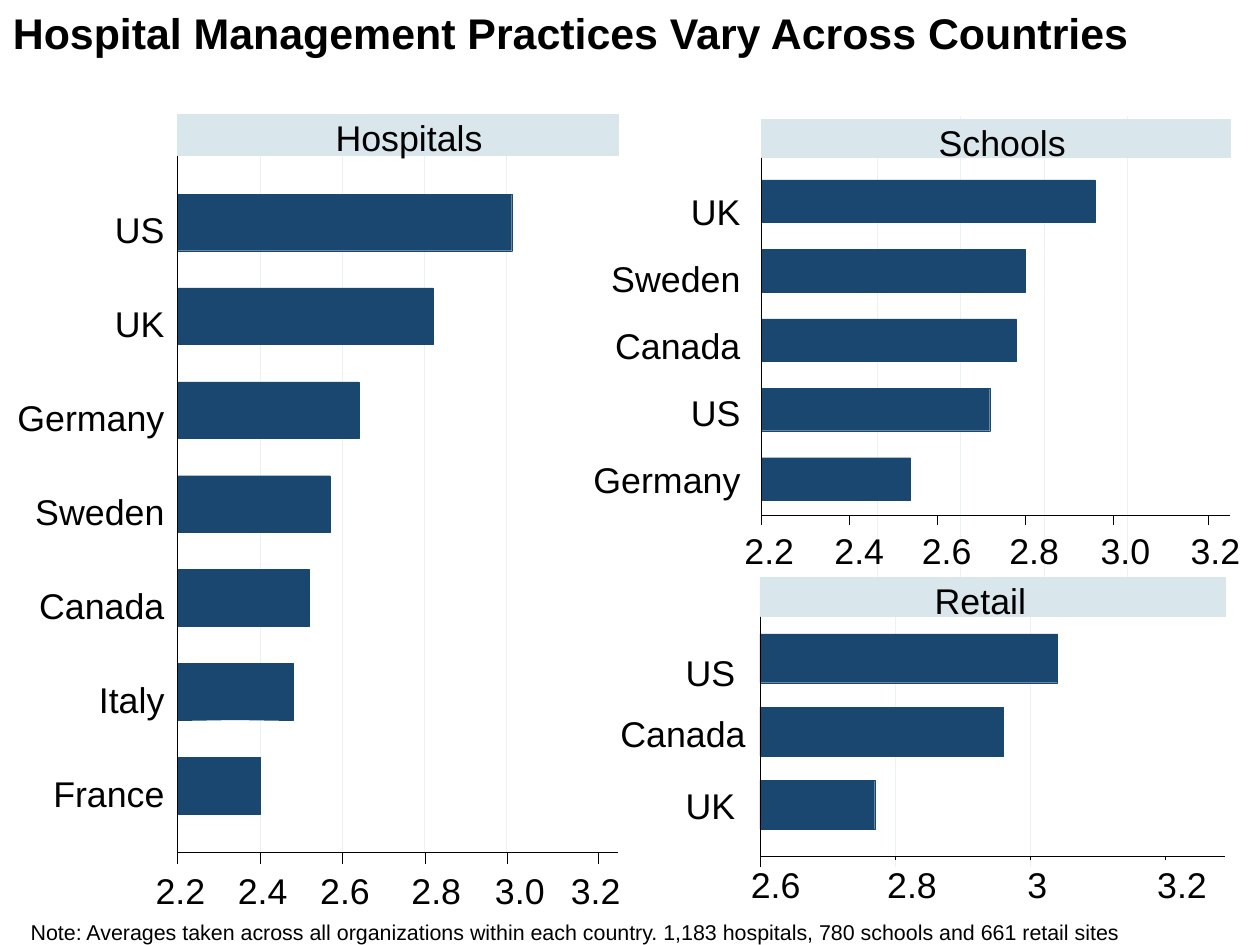
import dataclasses
import typing

import pptx
import pptx.dml.color
import pptx.enum.shapes
import pptx.enum.text
import pptx.oxml.ns
import pptx.shapes.group
import pptx.util
from lxml import etree

Inches = pptx.util.Inches
Align = pptx.enum.text.PP_ALIGN
Group = pptx.shapes.group.GroupShape


@dataclasses.dataclass(frozen=True)
class Theme:
    font: str = "Arial"
    ink: str = "000000"
    paper: str = "FFFFFF"
    bar: str = "1A476F"
    band: str = "D9E6EB"
    grid: str = "EAF2F3"
    head: int = 24
    body: int = 20
    note: int = 12
    thin: float = 0.1


class Box(typing.NamedTuple):
    left: float
    top: float
    width: float
    height: float


class Bar(typing.NamedTuple):
    name: str
    value: float
    right: float = 0
    down: float = 0


class Rows(typing.NamedTuple):
    top: float
    step: float
    height: float = 0


class Grid(typing.NamedTuple):
    left: float
    step: float
    count: int
    top: float
    base: float
    sway: float = 0


class Tick(typing.NamedTuple):
    text: str
    left: float


@dataclasses.dataclass(frozen=True)
class Panel:
    title: str
    head: Box
    band: Box
    back: float
    grid: Grid
    low: float
    unit: float
    base: float
    top: float
    foot: float
    tick: float
    shift: float
    marks: list[Tick]
    mark_top: float
    rows: Rows
    names: Rows
    edge: float
    bars: list[Bar]


THEME = Theme()
LINE = 0.34
MARK = 0.41
WIDTHS = {"US": 0.41, "UK": 0.41, "Germany": 1.17, "Sweden": 1.04,
          "Canada": 1, "Italy": 0.55, "France": 0.89}

PANELS = [
    Panel("Hospitals", Box(2.61, 0.9, 1.18, LINE), Box(1.38, 0.89, 3.43, 0.32),
          5.42, Grid(2.02, 0.64, 4, 1.21, 6.63), 2.2, 3.21, 6.63, 1.21, 6.63,
          0.09, 0.06,
          [Tick("2.2", 1.21), Tick("2.4", 1.85), Tick("2.6", 2.49),
           Tick("2.8", 3.2), Tick("3.0", 3.85), Tick("3.2", 4.44)], 6.76,
          Rows(1.51, 0.73, 0.44), Rows(1.62, 0.73), 1.28,
          [Bar("US", 3.01), Bar("UK", 2.82), Bar("Germany", 2.64),
           Bar("Sweden", 2.57), Bar("Canada", 2.52), Bar("Italy", 2.48),
           Bar("France", 2.4)]),
    Panel("Schools", Box(7.3, 0.94, 1.02, LINE), Box(5.92, 0.93, 3.65, 0.29),
          0, Grid(6.82, 0.65, 4, 0.93, 6.23, 0.03), 2.2, 3.42, 4.01, 1.17, 4.01,
          0.07, 0.06,
          [Tick("2.2", 5.79), Tick("2.4", 6.49), Tick("2.6", 7.17),
           Tick("2.8", 7.85), Tick("3.0", 8.56), Tick("3.2", 9.26)], 4.11,
          Rows(1.4, 0.54, 0.33), Rows(1.48, 0.52), 5.76,
          [Bar("UK", 2.96), Bar("Sweden", 2.8), Bar("Canada", 2.78),
           Bar("US", 2.72), Bar("Germany", 2.54)]),
    Panel("Retail", Box(7.27, 4.5, 0.74, LINE), Box(5.91, 4.49, 3.62, 0.3),
          1.96, Grid(6.96, 1.05, 2, 4.77, 6.74), 2.6, 5.26, 6.66, 4.77, 6.74,
          0.03, 0,
          [Tick("2.6", 5.84), Tick("2.8", 6.9), Tick("3", 7.99),
           Tick("3.2", 9)], 6.71,
          Rows(4.93, 0.57, 0.38), Rows(5.06, 0.52), 5.72,
          [Bar("US", 3.04), Bar("Canada", 2.96, 0.08, -0.04), Bar("UK", 2.77)]),
]


def tint(code: str) -> pptx.dml.color.RGBColor:
    return pptx.dml.color.RGBColor.from_string(code)


def add_rect(group: Group, box: Box, code: str) -> None:
    kind = pptx.enum.shapes.MSO_SHAPE.RECTANGLE
    rect = group.shapes.add_shape(kind, *map(Inches, box))
    rect.shadow.inherit = False
    rect.fill.solid()
    rect.fill.fore_color.rgb = tint(code)
    rect.line.color.rgb = tint(code)
    rect.line.width = pptx.util.Pt(THEME.thin)


def add_line(group: Group, x1: float, y1: float, x2: float, y2: float,
             code: str = THEME.ink) -> None:
    kind = pptx.enum.shapes.MSO_CONNECTOR.STRAIGHT
    line = group.shapes.add_connector(kind, *map(Inches, (x1, y1, x2, y2)))
    line.line.color.rgb = tint(code)
    line.line.width = pptx.util.Pt(THEME.thin)
    etree.SubElement(line._element.spPr, pptx.oxml.ns.qn("a:effectLst"))


def add_text(shapes: typing.Any, box: Box, text: str, size: int = THEME.body,
             align: Align = Align.LEFT, bold: bool = False, wrap: bool = False,
             pads: tuple[float, ...] = (0, 0, 0, 0)) -> None:
    frame = shapes.add_textbox(*map(Inches, box)).text_frame
    frame.word_wrap = wrap
    frame.auto_size = pptx.enum.text.MSO_AUTO_SIZE.SHAPE_TO_FIT_TEXT
    (frame.margin_left, frame.margin_top,
     frame.margin_right, frame.margin_bottom) = map(Inches, pads)
    para = frame.paragraphs[0]
    para.alignment = align
    run = para.add_run()
    run.text = text
    run.font.name = THEME.font
    run.font.size = pptx.util.Pt(size)
    run.font.bold = bold
    run.font.color.rgb = tint(THEME.ink)


def draw_bars(group: Group, panel: Panel) -> None:
    left = panel.band.left
    for i, bar in enumerate(panel.bars):
        width = (bar.value - panel.low) * panel.unit
        top = panel.rows.top + i * panel.rows.step
        add_rect(group, Box(left, top, width, panel.rows.height), THEME.bar)
        wide = WIDTHS[bar.name]
        spot = Box(panel.edge + bar.right - wide,
                   panel.names.top + i * panel.names.step + bar.down, wide, LINE)
        add_text(group.shapes, spot, bar.name, align=Align.RIGHT)


def draw_axes(group: Group, panel: Panel) -> None:
    left, base = panel.band.left, panel.base
    add_line(group, left, base, left + panel.band.width, base)
    add_line(group, left, panel.foot, left, panel.top)
    for i, mark in enumerate(panel.marks):
        x = left + i * 0.2 * panel.unit
        if i == len(panel.marks) - 1:
            x += panel.shift
        add_line(group, x, base, x, base + panel.tick)
        add_text(group.shapes, Box(mark.left, panel.mark_top, MARK, LINE), mark.text)


def draw_panel(group: Group, panel: Panel) -> None:
    band, grid = panel.band, panel.grid
    if panel.back:
        add_rect(group, Box(band.left, panel.top, band.width, panel.back), THEME.paper)
    for i in range(grid.count):
        x, lift = grid.left + i * grid.step, grid.sway * (i % 2)
        add_line(group, x, grid.base - lift, x, grid.top - lift, THEME.grid)
    draw_bars(group, panel)
    draw_axes(group, panel)
    add_rect(group, band, THEME.band)
    add_text(group.shapes, panel.head, panel.title)


def main() -> None:
    deck = pptx.Presentation()
    deck.slide_width, deck.slide_height = Inches(9.8), Inches(7.35)
    slide = deck.slides.add_slide(deck.slide_layouts[6])
    add_text(slide.shapes, Box(0.1, 0, 9.7, 0.5),
             "Hospital Management Practices Vary Across Countries",
             THEME.head, bold=True, wrap=True, pads=(0, 0.05, 0.1, 0.05))
    for panel in PANELS:
        draw_panel(slide.shapes.add_group_shape(), panel)
    add_text(slide.shapes, Box(0.14, 7.1, 9.4, 0.3),
             "Note: Averages taken across all organizations within each country. "
             "1,183 hospitals, 780 schools and 661 retail sites",
             THEME.note, wrap=True, pads=(0.1, 0.05, 0.1, 0.05))
    deck.save("out.pptx")


if __name__ == "__main__":
    main()
